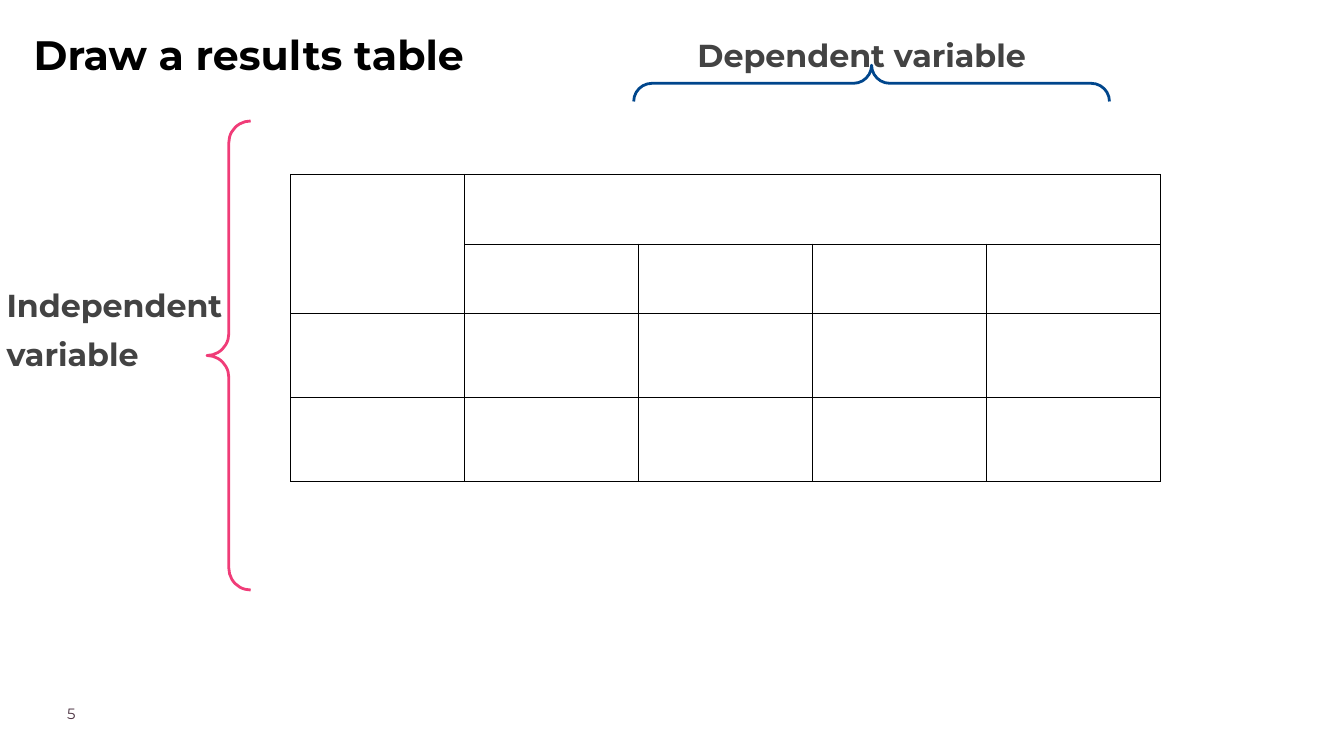
from pptx import Presentation, oxml, util as u
from pptx.dml.color import RGBColor
from pptx.enum import shapes, text
from pptx.oxml import ns

THEME = {
    "font": "Montserrat",
    "title": {"size": 44, "bold": True, "color": "000000"},
    "label": {"size": 34, "bold": True, "color": "434343"},
    "number": {"size": 16, "bold": False, "color": "4B3241"},
    "independent": "F03C78",
    "dependent": "00468C",
    "brace_width": 3,
    "grid": "000000",
    "grid_width": 0.75,
}

deck = Presentation()
deck.slide_width, deck.slide_height = u.Inches(20), u.Inches(11.25)
UNIT = deck.slide_width / 200  # square layout grid, 200 columns wide


def place(*cells):
    """Turn left, top, width, height in grid units into lengths."""
    return [u.Emu(round(cell * UNIT)) for cell in cells]


def write(frame, words, style, inset=0, **spacing):
    """Fill a text frame with one paragraph in a theme style."""
    margin = u.Emu(round(inset * UNIT))
    frame_format = {
        "word_wrap": True, "auto_size": text.MSO_AUTO_SIZE.NONE,
        "vertical_anchor": text.MSO_ANCHOR.TOP,
        "margin_left": margin, "margin_right": margin,
        "margin_top": margin, "margin_bottom": margin,
    }
    for name, value in frame_format.items():
        setattr(frame, name, value)
    paragraph = frame.paragraphs[0]
    for name, value in {"alignment": text.PP_ALIGN.LEFT, **spacing}.items():
        setattr(paragraph, name, value)
    run = paragraph.add_run()
    run.text = words
    look = THEME[style]
    run_format = {"name": THEME["font"], "size": u.Pt(look["size"]), "bold": look["bold"]}
    for name, value in run_format.items():
        setattr(run.font, name, value)
    run.font.color.rgb = RGBColor.from_string(look["color"])


slide = deck.slides.add_slide(deck.slide_layouts[5])

# Title
title = slide.shapes.title
title.left, title.top, title.width, title.height = place(5, 3.3, 86.4, 17.8)
write(title.text_frame, "Draw a results table", "title", line_spacing=1.15)

# Slide number
number = slide.shapes.add_textbox(*place(10, 104.8, 15.7, 3.9))
write(number.text_frame, "5", "number")

# Each variable: a brace and its label
variables = [
    ("Independent variable", "independent", (30.8, 18, 6.5, 69.8), 0, (0, 39.8, 34.8, 32.8)),
    ("Dependent variable", "dependent", (127, -23, 5.4, 70.8), 90, (102.8, 2.7, 53.8, 9.7)),
]
for words, color, brace_box, turn, label_box in variables:
    brace = slide.shapes.add_shape(shapes.MSO_SHAPE.LEFT_BRACE, *place(*brace_box))
    brace.adjustments[0] = brace.adjustments[1] = 0.5
    brace.rotation = turn
    brace.shadow.inherit = False
    brace.fill.background()
    brace.line.color.rgb = RGBColor.from_string(THEME[color])
    brace.line.width = u.Pt(THEME["brace_width"])
    label = slide.shapes.add_textbox(*place(*label_box))
    write(label.text_frame, words, "label", inset=1, line_spacing=1.3, space_after=u.Pt(10))

# Empty results table
column_width = 25.9
row_heights = [10.4, 10.4, 12.5, 12.5]
columns = 5
results = slide.shapes.add_table(
    len(row_heights), columns,
    *place(43.2, 25.9, columns * column_width, sum(row_heights))).table
results.first_row = results.horz_banding = False
for column in results.columns:
    column.width = place(column_width)[0]
for row, height in zip(results.rows, row_heights):
    row.height = place(height)[0]

# Thin border round every cell
for cell in results.iter_cells():
    properties = cell._tc.get_or_add_tcPr()
    for side in ("lnL", "lnR", "lnT", "lnB"):
        properties.append(oxml.parse_xml(
            f'<a:{side} {ns.nsdecls("a")} w="{u.Pt(THEME["grid_width"])}">'
            f'<a:solidFill><a:srgbClr val="{THEME["grid"]}"/></a:solidFill></a:{side}>'))
    cell.fill.background()

# Header cells: independent variable down, dependent variable across
results.cell(0, 0).merge(results.cell(1, 0))
results.cell(0, 1).merge(results.cell(0, columns - 1))

deck.save("out.pptx")
